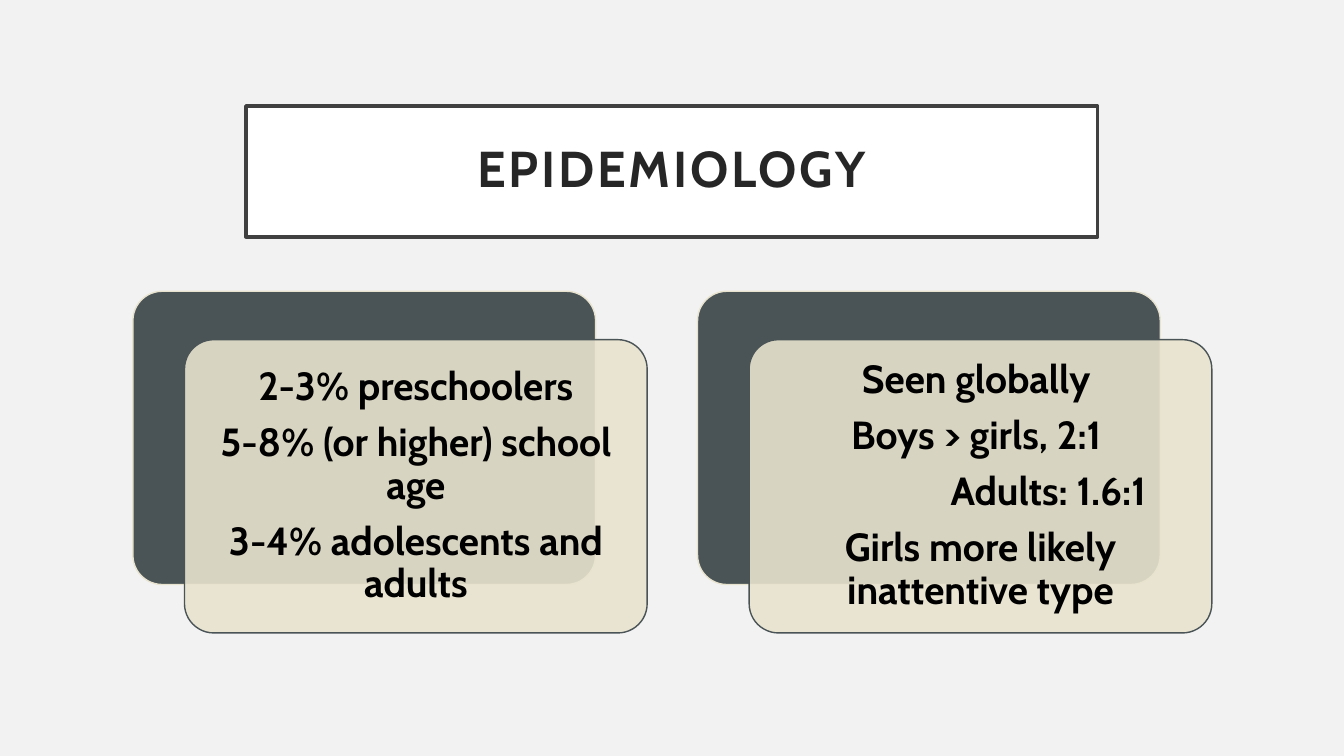
from pptx import Presentation
from pptx.dml.color import RGBColor
from pptx.enum.shapes import MSO_SHAPE
from pptx.enum.text import MSO_ANCHOR, MSO_AUTO_SIZE, PP_ALIGN
from pptx.oxml.ns import qn
from pptx.util import Cm, Pt
from lxml.etree import SubElement

PAPER = RGBColor(0xF2, 0xF2, 0xF2)
WHITE = RGBColor(0xFF, 0xFF, 0xFF)
FRAME = RGBColor(0x40, 0x40, 0x40)
INK = RGBColor(0x26, 0x26, 0x26)
BLACK = RGBColor(0, 0, 0)
SLATE = RGBColor(0x4A, 0x53, 0x56)
SAND = RGBColor(0xE8, 0xE3, 0xCE)

# Each point is its text and its left indent in cm.
GROUPS = [
    [("2-3% preschoolers", 0),
     ("5-8% (or higher) school age", 0),
     ("3-4% adolescents and adults", 0)],
    [("Seen globally ", 0),
     ("Boys > girls, 2:1 ", 0),
     ("Adults: 1.6:1", 3.41),
     ("Girls more likely inattentive type", 0)],
]
LEFT, TOP, STEP = 3.35, 7.34, 14.23
WIDTH, HEIGHT = 11.66, 7.39
SHIFT_X, SHIFT_Y = 1.3, 1.22
INSET = 0.21


class Deck:
    font = "Cabin"

    def __init__(self):
        self.file = Presentation()
        self.file.slide_width, self.file.slide_height = Cm(33.87), Cm(19.05)
        self.slide = self.file.slides.add_slide(self.file.slide_layouts[5])
        fill = self.slide.background.fill
        fill.solid()
        fill.fore_color.rgb = PAPER

    def paint(self, shape, fill, line, width):
        shape.fill.solid()
        shape.fill.fore_color.rgb = fill
        shape.line.color.rgb = line
        shape.line.width = Pt(width)

    def style(self, para, size, color):
        para.alignment = PP_ALIGN.CENTER
        para.line_spacing = 0.9
        for run in para.runs:
            run.font.name = self.font
            run.font.size = Pt(size)
            run.font.bold = True
            run.font.color.rgb = color

    def title(self, text, x, y, w, h):
        shape = self.slide.shapes.title
        shape.left, shape.top, shape.width, shape.height = map(Cm, (x, y, w, h))
        self.paint(shape, WHITE, FRAME, 2.5)
        frame = shape.text_frame
        frame.text = text
        frame.auto_size = MSO_AUTO_SIZE.NONE
        frame.vertical_anchor = MSO_ANCHOR.MIDDLE
        para = frame.paragraphs[0]
        self.style(para, 36, INK)
        para.runs[0].font._element.set("spc", "200")

    def card(self, x, y, fill, line, alpha=100):
        shape = self.slide.shapes.add_shape(
            MSO_SHAPE.ROUNDED_RECTANGLE, Cm(x), Cm(y), Cm(WIDTH), Cm(HEIGHT))
        shape.adjustments[0] = 0.1
        shape.shadow.inherit = False
        self.paint(shape, fill, line, 1)
        if alpha < 100:
            color = shape._element.spPr.find(qn("a:solidFill"))[0]
            SubElement(color, qn("a:alpha"), val=str(alpha * 1000))

    def points(self, items, x, y, w, h):
        box = self.slide.shapes.add_textbox(Cm(x), Cm(y), Cm(w), Cm(h))
        frame = box.text_frame
        frame.word_wrap = True
        frame.vertical_anchor = MSO_ANCHOR.MIDDLE
        frame.margin_left = frame.margin_right = Cm(0.3)
        frame.margin_top = frame.margin_bottom = Cm(0.3)
        frame.text = "\n".join(text for text, _ in items)
        for para, (_, indent) in zip(frame.paragraphs, items):
            self.style(para, 28, BLACK)
            para.space_after = Pt(9.8)
            if indent:
                para._p.get_or_add_pPr().set("marL", str(Cm(indent)))


def main():
    deck = Deck()
    deck.title("EPIDEMIOLOGY", 6.2, 2.67, 21.46, 3.3)
    for i, items in enumerate(GROUPS):
        x = LEFT + i * STEP
        deck.card(x, TOP, SLATE, SAND)
        x, y = x + SHIFT_X, TOP + SHIFT_Y
        deck.card(x, y, SAND, SLATE, alpha=90)
        deck.points(items, x + INSET, y + INSET,
                    WIDTH - 2 * INSET, HEIGHT - 2 * INSET)
    deck.file.save("out.pptx")


if __name__ == "__main__":
    main()
